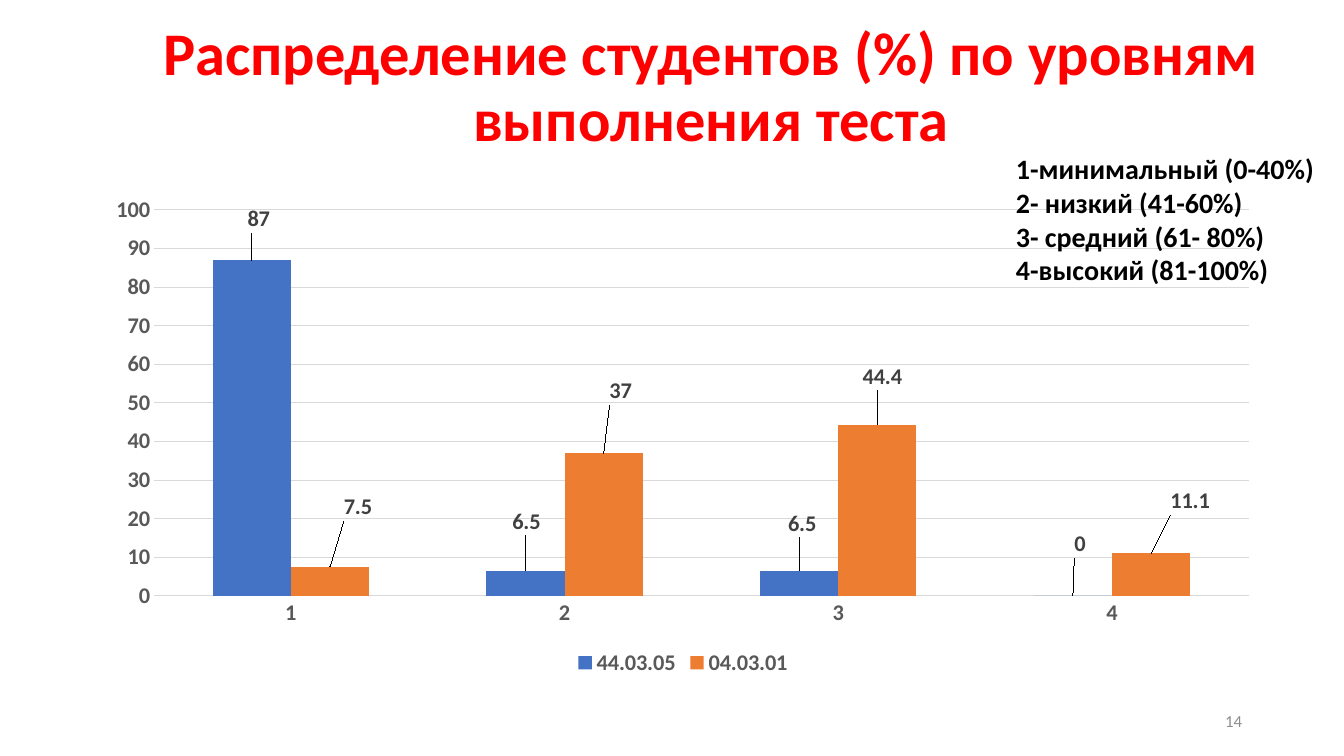
from lxml import etree
from pptx import Presentation
from pptx.chart.data import CategoryChartData
from pptx.dml.color import RGBColor
from pptx.enum.chart import XL_CHART_TYPE, XL_LABEL_POSITION, XL_LEGEND_POSITION, XL_TICK_MARK
from pptx.enum.text import MSO_ANCHOR, MSO_AUTO_SIZE, PP_ALIGN
from pptx.oxml.ns import qn
from pptx.util import Pt

SLIDE_WIDTH, SLIDE_HEIGHT = 1344, 756
EMU_PER_PX = 12192000 / SLIDE_WIDTH
FONT = "Calibri"
COLUMNS = XL_CHART_TYPE.COLUMN_CLUSTERED
BOTTOM = XL_LEGEND_POSITION.BOTTOM
OUTSIDE_END = XL_LABEL_POSITION.OUTSIDE_END
NO_TICKS = XL_TICK_MARK.NONE
TOP, MIDDLE = MSO_ANCHOR.TOP, MSO_ANCHOR.MIDDLE
LEFT, CENTER, RIGHT = PP_ALIGN.LEFT, PP_ALIGN.CENTER, PP_ALIGN.RIGHT
FIT_SHAPE = MSO_AUTO_SIZE.SHAPE_TO_FIT_TEXT

CHART_BOX = (93, 186, 1180, 495)
PLOT_BOX = (61, 24, 1095, 386)
CATEGORIES = ["1", "2", "3", "4"]
SERIES = [
    ("44.03.05", "4472C4", (87, 6.5, 6.5, 0), [(7, -23), (1, -31), (3, -29), (7, -34)]),
    ("04.03.01", "ED7D31", (7.5, 37, 44.4, 11.1), [(28, -42), (17, -44), (5, -30), (39, -34)]),
]
LEVELS = [
    "1-минимальный (0-40%)",
    "2- низкий (41-60%)",
    "3- средний (61- 80%)",
    "4-высокий (81-100%)",
]


def px(length):
    """Convert pixels to EMU."""
    return round(length * EMU_PER_PX)


def color(value):
    """Turn a hex string into a colour."""
    return RGBColor.from_string(value)


def style_font(font, size, fill, bold=True):
    """Set the typeface, size, colour and weight of a font."""
    font.name = FONT
    font.size = Pt(size)
    font.bold = bold
    font.color.rgb = color(fill)


def add_text(slide, box, lines, size, fill, bold=True, align=LEFT, anchor=TOP, spacing=1.0):
    """Add a wrapped text box with one paragraph per line and return its frame."""
    frame = slide.shapes.add_textbox(*map(px, box)).text_frame
    frame.word_wrap = True
    frame.vertical_anchor = anchor
    frame.text = "\n".join(lines)
    for paragraph in frame.paragraphs:
        paragraph.alignment = align
        paragraph.line_spacing = spacing
        for run in paragraph.runs:
            style_font(run.font, size, fill, bold)
    return frame


def manual_layout(settings):
    """Build a chart layout element from pairs of tag and value."""
    layout = etree.Element(qn("c:layout"))
    manual = etree.SubElement(layout, qn("c:manualLayout"))
    for tag, value in settings:
        etree.SubElement(manual, qn(f"c:{tag}")).set("val", str(value))
    return layout


def place_plot(chart):
    """Fix the inner plot area inside the chart frame."""
    plot_area = chart.plots[0]._element.getparent()
    for layout in plot_area.findall(qn("c:layout")):
        plot_area.remove(layout)
    left, top, width, height = PLOT_BOX
    chart_width, chart_height = CHART_BOX[2:]
    plot_area.insert(0, manual_layout([
        ("layoutTarget", "inner"), ("xMode", "edge"), ("yMode", "edge"),
        ("x", left / chart_width), ("y", top / chart_height),
        ("w", width / chart_width), ("h", height / chart_height),
    ]))


def style_labels(labels):
    """Put value labels above the columns in dark grey."""
    labels.position = OUTSIDE_END
    style_font(labels.font, 16, "404040")


def style_series(series, fill, offsets):
    """Colour a series and shift each value label by its offset."""
    series.format.fill.solid()
    series.format.fill.fore_color.rgb = color(fill)
    series.invert_if_negative = False
    series.data_labels.show_value = True
    style_labels(series.data_labels)
    chart_width, chart_height = CHART_BOX[2:]
    for index, (shift_x, shift_y) in enumerate(offsets):
        style_labels(series.points[index].data_label)
        label = series._element.xpath("c:dLbls/c:dLbl")[index]
        label.insert(1, manual_layout([
            ("x", shift_x / chart_width), ("y", shift_y / chart_height),
        ]))


def style_axis(axis):
    """Hide the line and ticks of an axis and style its labels."""
    axis.major_tick_mark = NO_TICKS
    axis.minor_tick_mark = NO_TICKS
    axis.format.line.fill.background()
    style_font(axis.tick_labels.font, 16, "595959")


def add_levels_chart(slide):
    """Add the column chart of students by test level."""
    data = CategoryChartData()
    data.categories = CATEGORIES
    for name, _, values, _ in SERIES:
        data.add_series(name, values)
    chart = slide.shapes.add_chart(COLUMNS, *map(px, CHART_BOX), data).chart
    style_font(chart.font, 10, "000000", False)
    chart.has_title = False
    chart.has_legend = True
    chart.legend.position = BOTTOM
    chart.legend.include_in_layout = False
    style_font(chart.legend.font, 16, "595959")
    plot = chart.plots[0]
    plot.gap_width = 150
    plot.overlap = 0
    plot.vary_by_categories = False
    for series, (_, fill, _, offsets) in zip(plot.series, SERIES):
        style_series(series, fill, offsets)
    style_axis(chart.category_axis)
    axis = chart.value_axis
    style_axis(axis)
    axis.minimum_scale, axis.maximum_scale, axis.major_unit = 0, 100, 10
    axis.has_major_gridlines = True
    axis.major_gridlines.format.line.color.rgb = color("D9D9D9")
    axis.major_gridlines.format.line.width = Pt(0.75)
    place_plot(chart)


def main():
    """Build the slide and save it."""
    presentation = Presentation()
    presentation.slide_width, presentation.slide_height = px(SLIDE_WIDTH), px(SLIDE_HEIGHT)
    slide = presentation.slides.add_slide(presentation.slide_layouts[6])
    add_text(slide, (147, 31, 1128, 116), ["Распределение студентов (%) по уровням выполнения теста"],
             43.2, "FF0000", align=CENTER, anchor=MIDDLE, spacing=0.9)
    add_text(slide, (950, 701, 302, 40), ["14"], 12, "8C8C8C", bold=False, align=RIGHT, anchor=MIDDLE)
    add_levels_chart(slide)
    levels = add_text(slide, (1006, 147, 319, 146), LEVELS, 20, "000000")
    levels.auto_size = FIT_SHAPE
    presentation.save("out.pptx")


if __name__ == "__main__":
    main()
